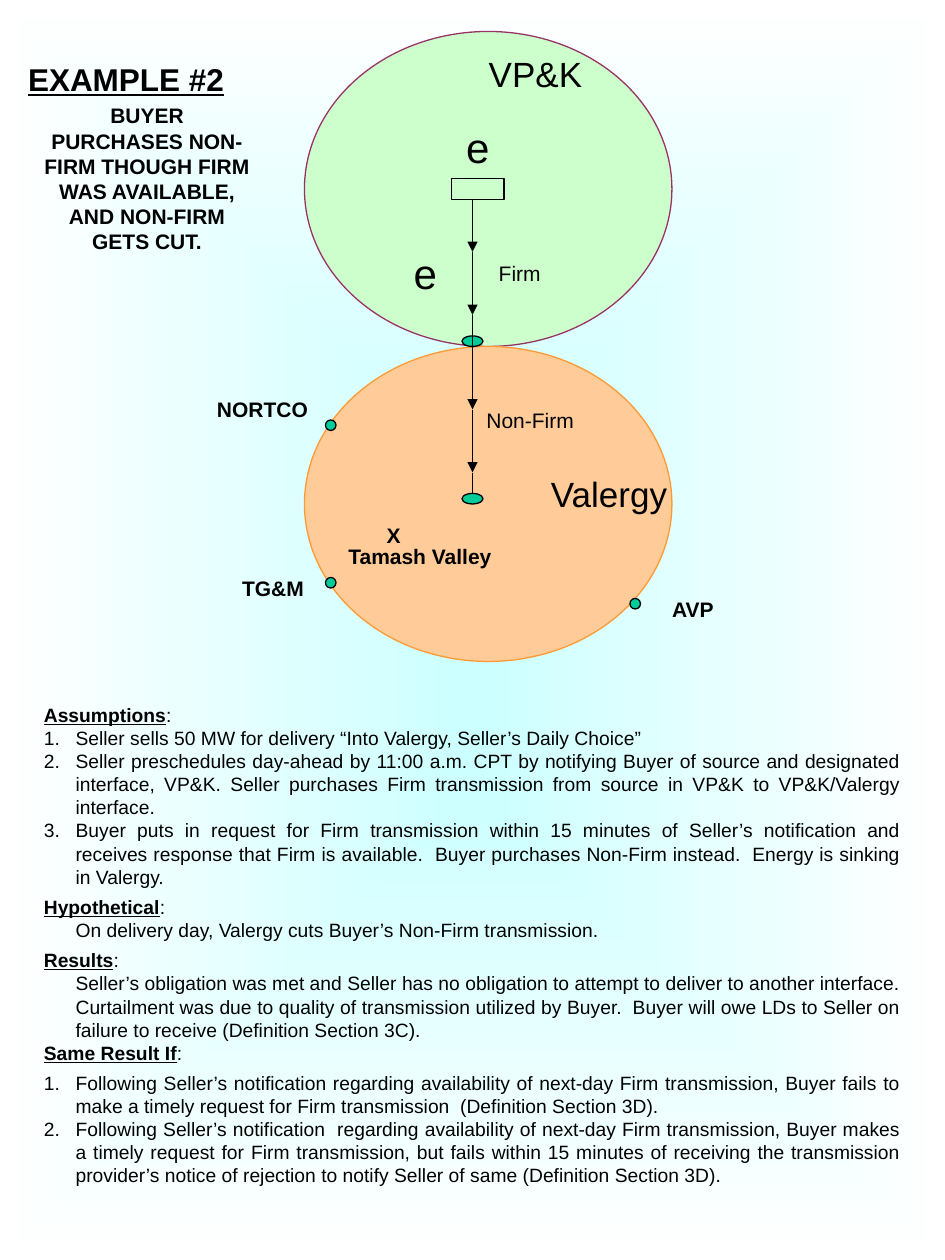
from lxml.etree import SubElement
from pptx import Presentation
from pptx.dml.color import RGBColor
from pptx.enum.shapes import MSO_CONNECTOR as Connector, MSO_SHAPE as Shape
from pptx.enum.text import MSO_ANCHOR as Anchor, PP_ALIGN as Align
from pptx.oxml.ns import qn
from pptx.util import Cm, Pt

BLACK = RGBColor(0x00, 0x00, 0x00)
WHITE = RGBColor(0xFF, 0xFF, 0xFF)
PALE_CYAN = RGBColor(0xCC, 0xFF, 0xFF)
PALE_GREEN = RGBColor(0xCC, 0xFF, 0xCC)
PLUM = RGBColor(0x99, 0x33, 0x66)
PEACH = RGBColor(0xFF, 0xCC, 0x99)
ORANGE = RGBColor(0xFF, 0x99, 0x33)
TEAL = RGBColor(0x00, 0xCC, 0x99)

INDENT = Cm(0.64)
SECTION_GAP = Pt(4.1)

# Left, top, width, height in grid cells; text, size, bold
LABELS = [
    (45, 5, 12, 4, "VP&K", 20, False),
    (43, 13, 5, 2, "e", 24, False),
    (38, 25, 5, 2, "e", 24, False),
    (46, 25, 7, 2, "Firm", 12, False),
    (44, 39, 13, 2, "Non-Firm", 12, False),
    (50, 45, 16, 4, "Valergy", 20, False),
    (35, 50, 5, 2, "X", 12, True),
    (31, 52, 18, 2, "Tamash Valley", 12, True),
    (19, 37, 12, 4, "NORTCO", 12, True),
    (21, 54, 10, 4, "TG&M", 12, True),
    (62, 56, 8, 4, "AVP", 12, True),
]

ASSUMPTIONS = [
    "Seller sells 50 MW for delivery “Into Valergy, Seller’s Daily Choice”",
    "Seller preschedules day-ahead by 11:00 a.m. CPT by notifying Buyer of source and "
    "designated interface, VP&K. Seller purchases Firm transmission from source in VP&K "
    "to VP&K/Valergy interface.",
    "Buyer puts in request for Firm transmission within 15 minutes of Seller’s "
    "notification and receives response that Firm is available.  Buyer purchases "
    "Non-Firm instead.  Energy is sinking in Valergy.",
]
HYPOTHETICAL = "On delivery day, Valergy cuts Buyer’s Non-Firm transmission."
RESULTS = (
    "Seller’s obligation was met and Seller has no obligation to attempt to deliver to "
    "another interface. Curtailment was due to quality of transmission utilized by "
    "Buyer.  Buyer will owe LDs to Seller on failure to receive (Definition Section 3C)."
)
SAME_RESULT = [
    "Following Seller’s notification regarding availability of next-day Firm "
    "transmission, Buyer fails to make a timely request for Firm transmission  "
    "(Definition Section 3D).",
    "Following Seller’s notification  regarding availability of next-day Firm "
    "transmission, Buyer makes a timely request for Firm transmission, but fails within "
    "15 minutes of receiving the transmission provider’s notice of rejection to notify "
    "Seller of same (Definition Section 3D).",
]


def cells(count):
    """Length of a number of grid cells, twelve to the inch."""
    return Cm(count * 2.54 / 12)


def set_background(slide):
    """Fade from a cyan centre to white edges."""
    fill = slide.background.fill
    fill.gradient()
    for stop, color in zip(fill.gradient_stops, (PALE_CYAN, WHITE)):
        stop.color.rgb = color
    gradient = slide.element.find(".//" + qn("a:gradFill"))
    gradient.remove(gradient.find(qn("a:lin")))
    fade = SubElement(gradient, qn("a:path"), {"path": "rect"})
    SubElement(fade, qn("a:fillToRect"), dict.fromkeys("ltrb", "50000"))


def add_outline(slide, kind, left, top, width, height, fill=None, line=BLACK):
    outline = slide.shapes.add_shape(kind, *map(cells, (left, top, width, height)))
    outline.shadow.inherit = False
    if fill is None:
        outline.fill.background()
    else:
        outline.fill.solid()
        outline.fill.fore_color.rgb = fill
    outline.line.color.rgb = line
    outline.line.width = Pt(0.75)


def add_frame(slide, left, top, width, height, wrap):
    box = slide.shapes.add_textbox(*map(cells, (left, top, width, height)))
    frame = box.text_frame
    frame.word_wrap = wrap
    frame.vertical_anchor = Anchor.MIDDLE
    return frame


def style(paragraph, size, align, bold=False, underline=False):
    paragraph.alignment = align
    font = paragraph.font
    font.name = "Arial"
    font.size = Pt(size)
    font.color.rgb = BLACK
    font.bold = bold
    font.underline = underline


def add_label(slide, left, top, width, height, text, size, bold, underline=False, wrap=False):
    paragraph = add_frame(slide, left, top, width, height, wrap).paragraphs[0]
    paragraph.text = text
    style(paragraph, size, Align.CENTER, bold, underline)


def add_flow(slide, start, end, arrow=True):
    """Vertical piece of the energy path, between two grid rows."""
    x = cells(45)
    flow = slide.shapes.add_connector(Connector.STRAIGHT, x, cells(start), x, cells(end))
    flow.line.color.rgb = BLACK
    flow.line.width = Pt(0.75)
    if arrow:
        SubElement(flow.line._get_or_add_ln(), qn("a:tailEnd"), {"type": "triangle"})
    SubElement(flow.element.spPr, qn("a:effectLst"))


def next_paragraph(frame):
    first = frame.paragraphs[0]
    paragraph = first if not first.runs else frame.add_paragraph()
    style(paragraph, 11, Align.JUSTIFY)
    return paragraph


def add_heading(frame, text, before=0, after=0):
    paragraph = next_paragraph(frame)
    paragraph.space_before, paragraph.space_after = before, after
    title = paragraph.add_run()
    title.text = text
    title.font.bold = title.font.underline = True
    paragraph.add_run().text = ":"


def add_body(frame, text, hanging=0):
    paragraph = next_paragraph(frame)
    paragraph.add_run().text = text
    properties = paragraph._p.get_or_add_pPr()
    properties.set("marL", str(INDENT))
    properties.set("indent", str(-hanging))


def add_numbered(frame, items):
    for number, item in enumerate(items, 1):
        add_body(frame, f"{number}.\t{item}", hanging=INDENT)


def add_explanation(slide):
    frame = add_frame(slide, 3, 63, 84, 54, wrap=True)
    add_heading(frame, "Assumptions")
    add_numbered(frame, ASSUMPTIONS)
    add_heading(frame, "Hypothetical", before=SECTION_GAP)
    add_body(frame, HYPOTHETICAL)
    add_heading(frame, "Results", before=SECTION_GAP)
    add_body(frame, RESULTS)
    add_heading(frame, "Same Result If", after=SECTION_GAP)
    add_numbered(frame, SAME_RESULT)


def main():
    deck = Presentation()
    deck.slide_width, deck.slide_height = Cm(19.05), Cm(25.4)
    slide = deck.slides.add_slide(deck.slide_layouts[6])
    set_background(slide)

    add_label(slide, 1, 5, 22, 5, "EXAMPLE #2", 18, True, underline=True)
    add_label(slide, 3, 12, 22, 10, "BUYER PURCHASES NON-FIRM THOUGH FIRM WAS AVAILABLE, "
              "AND NON-FIRM GETS CUT.", 12, True, wrap=True)
    add_explanation(slide)

    for top, fill, line in ((3, PALE_GREEN, PLUM), (33, PEACH, ORANGE)):
        add_outline(slide, Shape.OVAL, 29, top, 35, 30, fill, line)
    add_outline(slide, Shape.RECTANGLE, 43, 17, 5, 2)
    for left, top, width in ((31, 40, 1), (31, 55, 1), (60, 57, 1), (44, 32, 2), (44, 47, 2)):
        add_outline(slide, Shape.FLOWCHART_CONNECTOR, left, top, width, 1, TEAL)
    for start, end in ((19, 24), (24, 30), (30, 39), (39, 45)):
        add_flow(slide, start, end)
    add_flow(slide, 45, 47, arrow=False)
    for label in LABELS:
        add_label(slide, *label)

    deck.save("out.pptx")


if __name__ == "__main__":
    main()
